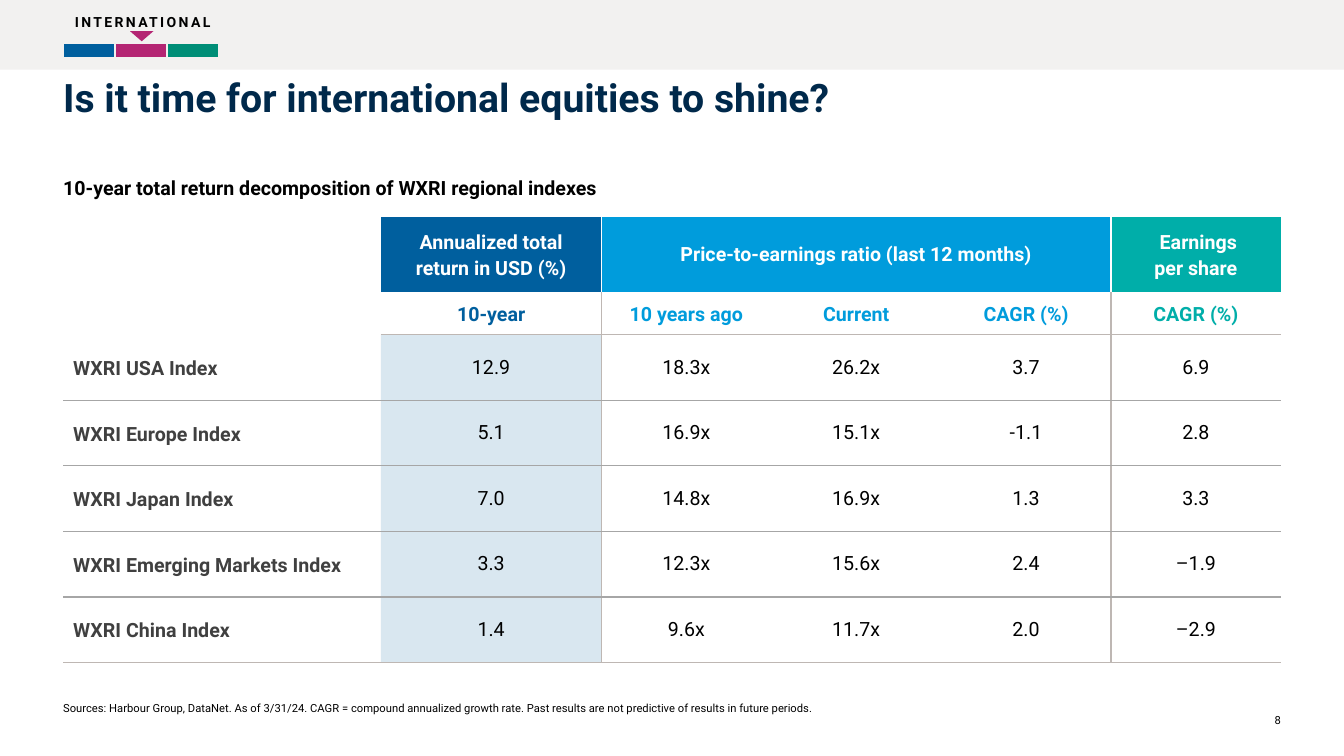
from dataclasses import dataclass

from lxml import etree
from pptx import Presentation
from pptx.dml.color import RGBColor
from pptx.enum.shapes import MSO_SHAPE
from pptx.enum.text import MSO_ANCHOR, MSO_AUTO_SIZE, PP_ALIGN
from pptx.oxml.ns import qn
from pptx.util import Inches, Pt

RECTANGLE, TRIANGLE = MSO_SHAPE.RECTANGLE, MSO_SHAPE.ISOSCELES_TRIANGLE
LEFT, CENTER, RIGHT = PP_ALIGN.LEFT, PP_ALIGN.CENTER, PP_ALIGN.RIGHT
TOP, MIDDLE, BOTTOM = MSO_ANCHOR.TOP, MSO_ANCHOR.MIDDLE, MSO_ANCHOR.BOTTOM
NO_FIT = MSO_AUTO_SIZE.NONE


@dataclass(frozen=True)
class Theme:
    font: str = "Roboto"
    title_size: float = 28
    table_size: float = 14
    label_size: float = 10
    note_size: float = 8
    black: str = "000000"
    white: str = "FFFFFF"
    band: str = "F2F1F0"
    navy: str = "00294B"
    blue: str = "005F9E"
    sky: str = "009CDC"
    teal: str = "00AEA9"
    magenta: str = "B42573"
    green: str = "008E77"
    index_text: str = "404040"
    row_rule: str = "A6A6A6"
    frame_rule: str = "BEB7B3"


THEME = Theme()
PAGE_WIDTH, PAGE_HEIGHT = Inches(13.33), Inches(7.5)
MARGIN, CONTENT = 4.7, 90.61
COLUMNS = [23.64, 16.41] + [12.64] * 4
ROWS = [10, 5.6] + [8.67] * 5
GROUP_ENDS = (1, 4)

HEADERS = [
    (1, 1, "Annualized total\nreturn in USD (%)", THEME.blue, Pt(18)),
    (2, 4, "Price-to-earnings ratio (last 12 months)", THEME.sky, 1.0),
    (5, 5, " Earnings\nper share", THEME.teal, Pt(18)),
]
SUBHEADERS = ["10-year", "10 years ago", "Current", "CAGR (%)", "CAGR (%)"]
RETURNS = [
    ("WXRI USA Index", "12.9", "18.3x", "26.2x", "3.7", "6.9"),
    ("WXRI Europe Index", "5.1", "16.9x", "15.1x", "-1.1", "2.8"),
    ("WXRI Japan Index", "7.0", "14.8x", "16.9x", "1.3", "3.3"),
    ("WXRI Emerging Markets Index", "3.3", "12.3x", "15.6x", "2.4", "–1.9"),
    ("WXRI China Index", "1.4", "9.6x", "11.7x", "2.0", "–2.9"),
]


def across(percent):
    return round(PAGE_WIDTH * percent / 100)


def down(percent):
    return round(PAGE_HEIGHT * percent / 100)


def area(left, top, width, height):
    return across(left), down(top), across(width), down(height)


def write(frame, text, size, color=THEME.black, bold=False, align=LEFT,
          spacing=1.0, before=0, after=0, tracking=0):
    para = frame.paragraphs[0]
    para.alignment, para.line_spacing = align, spacing
    para.space_before, para.space_after = Pt(before), Pt(after)
    for number, line in enumerate(text.split("\n")):
        if number:
            para.add_line_break()
        span = para.add_run()
        span.text = line
        span.font.name, span.font.size, span.font.bold = THEME.font, Pt(size), bold
        span.font.color.rgb = RGBColor.from_string(color)
        if tracking:
            span.font._element.set("spc", str(tracking))
    return para


def set_frame(frame, anchor=TOP):
    frame.word_wrap, frame.auto_size = True, NO_FIT
    frame.vertical_anchor = anchor
    frame.margin_left = frame.margin_right = 0
    frame.margin_top = frame.margin_bottom = 0


def add_text(page, place, text, size, anchor=TOP, **style):
    box = page.shapes.add_textbox(*area(*place))
    set_frame(box.text_frame, anchor)
    write(box.text_frame, text, size, **style)


def fill_placeholder(holder, place, text, size, **style):
    holder.left, holder.top, holder.width, holder.height = area(*place)
    set_frame(holder.text_frame)
    para = write(holder.text_frame, text, size, bold=True, **style)
    properties = para._p.get_or_add_pPr()
    properties.set("marL", "0")
    properties.set("indent", "0")
    etree.SubElement(properties, qn("a:buNone"))


def add_shape(page, kind, place, color, rotation=0):
    shape = page.shapes.add_shape(kind, *area(*place))
    shape.shadow.inherit = False
    shape.fill.solid()
    shape.fill.fore_color.rgb = RGBColor.from_string(color)
    shape.line.fill.background()
    shape.rotation = rotation


def add_table(page, left, top, columns, rows):
    place = area(left, top, sum(columns), sum(rows))
    table = page.shapes.add_table(len(rows), len(columns), *place).table
    table.first_row = table.horz_banding = False
    for column, width in zip(table.columns, columns):
        column.width = across(width)
    for row, height in zip(table.rows, rows):
        row.height = down(height)
    return table


def format_cell(cell, color, borders, alpha=None, margins=None):
    cell.vertical_anchor = MIDDLE
    if margins is not None:
        cell.margin_left = cell.margin_right = margins
        cell.margin_top = cell.margin_bottom = margins
    properties = cell._tc.get_or_add_tcPr()
    if color:
        cell.fill.solid()
        cell.fill.fore_color.rgb = RGBColor.from_string(color)
        if alpha:
            tint = properties.find(".//" + qn("a:srgbClr"))
            etree.SubElement(tint, qn("a:alpha")).set("val", str(alpha * 1000))
    else:
        cell.fill.background()
    for position, (side, border) in enumerate(zip("LRTB", borders)):
        line = etree.Element(qn("a:ln" + side))
        if border:
            shade, width = border
            line.set("w", str(Pt(width)))
            paint = etree.SubElement(line, qn("a:solidFill"))
            etree.SubElement(paint, qn("a:srgbClr")).set("val", shade)
        else:
            etree.SubElement(line, qn("a:noFill"))
        properties.insert(position, line)


def rule_below(row, column):
    if row < 0 or (row < 2 and column == 0):
        return None
    shades = [THEME.white, THEME.frame_rule] + [THEME.row_rule] * 4 + [THEME.frame_rule]
    return shades[row], 1


def rule_right(row, column):
    if column not in GROUP_ENDS:
        return None
    return (THEME.white if row == 0 else THEME.frame_rule), 1


def add_returns_table(page):
    table = add_table(page, MARGIN, 28.7, COLUMNS, ROWS)
    fills = {(0, column): color for first, last, _, color, _ in HEADERS
             for column in range(first, last + 1)}
    for row in range(len(ROWS)):
        for column in range(len(COLUMNS)):
            borders = (rule_right(row, column - 1), rule_right(row, column),
                       rule_below(row - 1, column), rule_below(row, column))
            tinted = row > 1 and column == 1
            color = THEME.blue if tinted else fills.get((row, column))
            format_cell(table.cell(row, column), color, borders,
                        alpha=15 if tinted else None,
                        margins=0 if row > 1 and column else None)
    for first, last, text, color, spacing in HEADERS:
        header = table.cell(0, first)
        if last > first:
            header.merge(table.cell(0, last))
        write(header.text_frame, text, THEME.table_size, THEME.white, True, CENTER, spacing)
        for column in range(first, last + 1):
            write(table.cell(1, column).text_frame, SUBHEADERS[column - 1],
                  THEME.table_size, color, True, CENTER, 1.1, 6)
    for row, (index, *values) in enumerate(RETURNS, 2):
        write(table.cell(row, 0).text_frame, index, THEME.table_size,
              THEME.index_text, True, spacing=1.1, before=6)
        for column, value in enumerate(values, 1):
            write(table.cell(row, column).text_frame, value, THEME.table_size, align=CENTER)


def add_section_marker(page):
    strip = add_table(page, MARGIN, 5.65, [3.87] * 3, [2])
    for cell, color in zip(strip.rows[0].cells, (THEME.blue, THEME.magenta, THEME.green)):
        format_cell(cell, color, [(THEME.band, 1.5)] * 4, margins=0)
        para = cell.text_frame.paragraphs[0]._p
        etree.SubElement(para, qn("a:endParaRPr")).set("sz", "100")
    add_shape(page, TRIANGLE, (9.68, 4.13, 1.73, 1.33), THEME.magenta, 180)
    add_text(page, (4.88, 1.73, 11.48, 2.27), "INTERNATIONAL", THEME.label_size,
             bold=True, align=CENTER, tracking=170)


def main():
    deck = Presentation()
    deck.slide_width, deck.slide_height = PAGE_WIDTH, PAGE_HEIGHT
    page = deck.slides.add_slide(deck.slide_layouts[1])
    add_shape(page, RECTANGLE, (0, 0, 100, 9.2), THEME.band)
    fill_placeholder(page.shapes.title, (MARGIN, 10.13, CONTENT, 5.73),
                     "Is it time for international equities to shine?",
                     THEME.title_size, color=THEME.navy, spacing=0.95)
    fill_placeholder(page.placeholders[1], (MARGIN, 23.33, CONTENT, 8.27),
                     "10-year total return decomposition of WXRI regional indexes",
                     THEME.table_size, before=6, after=18)
    add_section_marker(page)
    add_returns_table(page)
    add_text(page, (MARGIN, 89.87, CONTENT, 4.67),
             "Sources: Harbour Group, DataNet. As of 3/31/24. CAGR = compound annualized "
             "growth rate. Past results are not predictive of results in future periods.",
             THEME.note_size, BOTTOM, spacing=0.9, before=6, after=3)
    add_text(page, (89.46, 94.27, 5.85, 1.87), "8", THEME.note_size, BOTTOM, align=RIGHT)
    deck.save("out.pptx")


if __name__ == "__main__":
    main()
